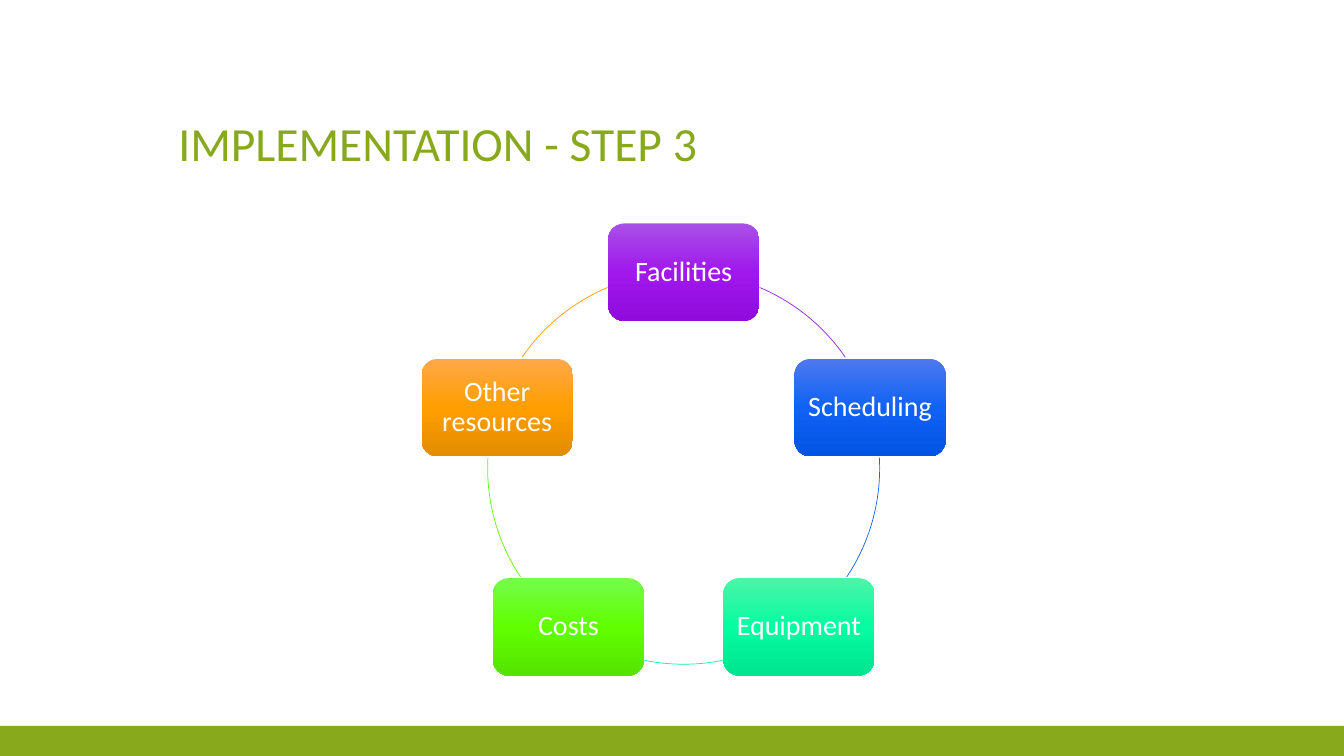
"""Build the "Implementation - Step 3" slide: five resources joined in a ring."""
from copy import deepcopy
from math import cos, radians, sin

from pptx import Presentation
from pptx.dml.color import RGBColor
from pptx.enum.shapes import MSO_SHAPE
from pptx.enum.text import MSO_ANCHOR, MSO_AUTO_SIZE, PP_ALIGN
from pptx.oxml.ns import qn
from pptx.util import Cm, Pt

RECTANGLE, ROUNDED, ARC = MSO_SHAPE.RECTANGLE, MSO_SHAPE.ROUNDED_RECTANGLE, MSO_SHAPE.ARC
MIDDLE, BOTTOM = MSO_ANCHOR.MIDDLE, MSO_ANCHOR.BOTTOM
LEFT, CENTER = PP_ALIGN.LEFT, PP_ALIGN.CENTER
NO_AUTOFIT = MSO_AUTO_SIZE.NONE

FONT = "Calibri"
COLORS = {
    "accent": "87A91B",
    "text": "FFFFFF",
    "Facilities": ("A850E7", "A018EC", "910BDC", "9D22E2"),
    "Scheduling": ("4E78EE", "0F62F4", "0254E4", "1965E9"),
    "Equipment": ("4CF5A8", "05FCA1", "00E490", "11F09E"),
    "Costs": ("75FC4B", "60FF00", "55E300", "61F808"),
    "Other resources": ("FFA84B", "FE9E00", "E28C00", "FE9E00"),
}
ARC_ANGLES = {
    "Facilities": (-67.2, -34.5),
    "Scheduling": (-3.1, 33.7),
    "Equipment": (78.5, 101.5),
    "Costs": (146.3, 183.1),
    "Other resources": (214.5, 247.2),
}
CENTER_X, CENTER_Y, RADIUS = 17.23, 11.8, 4.94
BOX_WIDTH, BOX_HEIGHT = 3.81, 2.46


def add_plain(kind, left, top, width, height):
    shape = slide.shapes.add_shape(kind, Cm(left), Cm(top), Cm(width), Cm(height))
    shape.shadow.inherit = False
    shape.line.fill.background()
    return shape


def style_text(frame, text, size, color, alignment, anchor):
    frame.text = text
    frame.word_wrap = True
    frame.auto_size = NO_AUTOFIT
    frame.vertical_anchor = anchor
    paragraph = frame.paragraphs[0]
    paragraph.alignment = alignment
    paragraph.line_spacing = 0.9
    paragraph.font.name = FONT
    paragraph.font.size = Pt(size)
    paragraph.font.color.rgb = RGBColor.from_string(COLORS[color])


deck = Presentation()
deck.slide_width, deck.slide_height = Cm(33.87), Cm(19.05)
slide = deck.slides.add_slide(deck.slide_layouts[5])

footer_band = add_plain(RECTANGLE, 0, 18.29, 33.87, 0.76)
footer_band.fill.solid()
footer_band.fill.fore_color.rgb = RGBColor.from_string(COLORS["accent"])

heading = slide.shapes.title
heading.left, heading.top, heading.width, heading.height = Cm(4.24), Cm(1.27), Cm(25.4), Cm(3.18)
style_text(heading.text_frame, "IMPLEMENTATION - STEP 3", 34, "accent", LEFT, BOTTOM)

for index, (resource, angles) in enumerate(ARC_ANGLES.items()):
    *shades, arc_color = COLORS[resource]
    turn = radians(-90 + index * 360 / len(ARC_ANGLES))
    box = add_plain(
        ROUNDED,
        CENTER_X + RADIUS * cos(turn) - BOX_WIDTH / 2,
        CENTER_Y + RADIUS * sin(turn) - BOX_HEIGHT / 2,
        BOX_WIDTH,
        BOX_HEIGHT,
    )
    box.fill.gradient()
    box.fill.gradient_angle = 270
    stop_list = box._element.spPr.find(qn("a:gradFill")).find(qn("a:gsLst"))
    stop_list.append(deepcopy(stop_list[0]))
    for stop, position, shade in zip(box.fill.gradient_stops, (0, 0.5, 1), shades):
        stop.position = position
        stop.color.rgb = RGBColor.from_string(shade)
    label = box.text_frame
    label.margin_left = label.margin_right = label.margin_top = label.margin_bottom = Cm(0.2)
    style_text(label, resource, 20, "text", CENTER, MIDDLE)

    link = add_plain(ARC, CENTER_X - RADIUS, CENTER_Y - RADIUS, 2 * RADIUS, 2 * RADIUS)
    link.fill.background()
    link.line.color.rgb = RGBColor.from_string(arc_color)
    link.line.width = Pt(0.5)
    for end, angle in enumerate(angles):
        link.adjustments[end] = angle % 360 * 0.6

deck.save("out.pptx")
